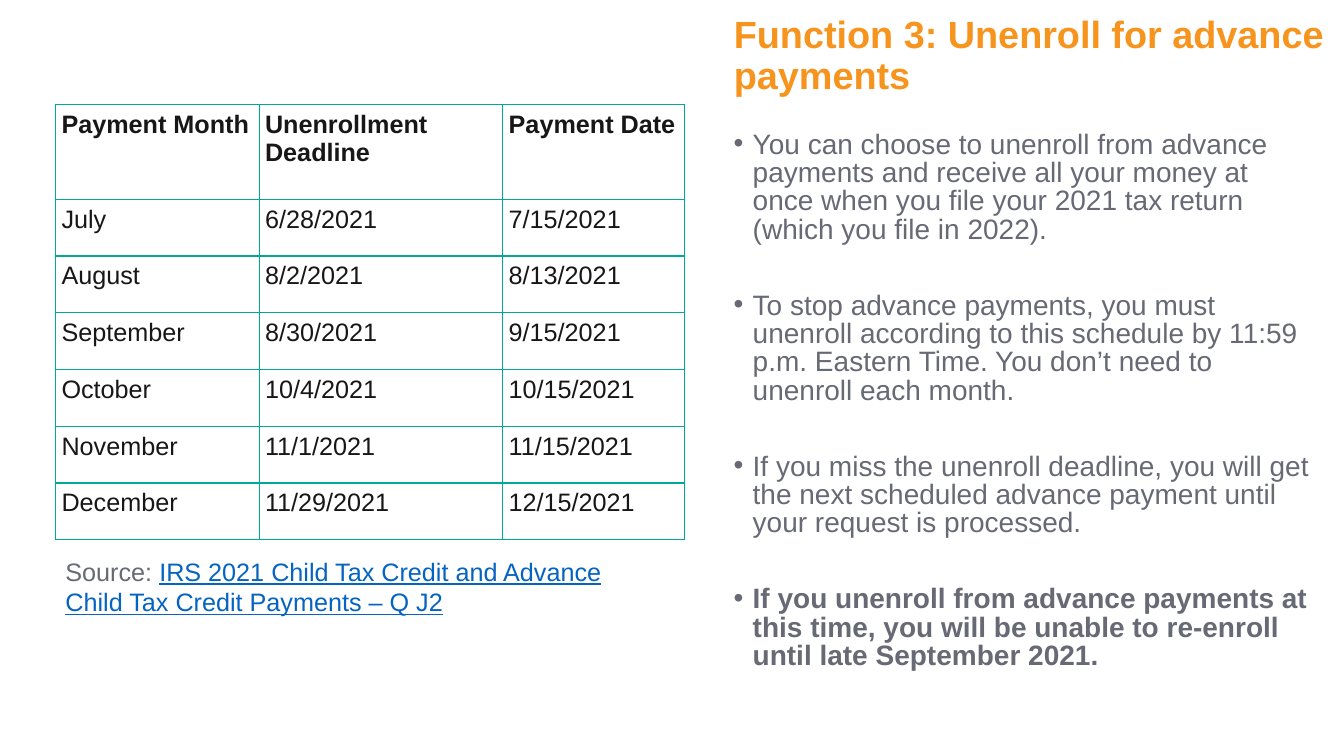
"""Build the slide on unenrolling from advance payments."""
from lxml.etree import SubElement
from pptx import Presentation
from pptx.dml.color import RGBColor
from pptx.enum.text import MSO_ANCHOR, PP_ALIGN
from pptx.oxml.ns import qn
from pptx.util import Cm, Pt

COLORS = {"title": "F7941E", "body": "676974", "cell": "181717",
          "border": "00A998", "link": "0563C1", "paper": "FFFFFF"}


def style(font, size, color, bold=False):
    font.name, font.size, font.bold = "Arial", Pt(size), bold
    font.color.rgb = RGBColor.from_string(COLORS[color])


def add_borders(cell):
    properties = cell._tc.get_or_add_tcPr()
    for position, side in enumerate(("lnL", "lnR", "lnT", "lnB")):
        line = properties.makeelement(qn(f"a:{side}"), {"w": str(Pt(1))})
        fill = SubElement(line, qn("a:solidFill"))
        SubElement(fill, qn("a:srgbClr"), val=COLORS["border"])
        properties.insert(position, line)


deck = Presentation()
deck.slide_width, deck.slide_height = Cm(33.87), Cm(19.05)
page = deck.slides.add_slide(deck.slide_layouts[5])

title = page.shapes.title
title.left, title.top, title.width, title.height = Cm(18.24), Cm(0.28), Cm(15.6), Cm(1.96)
title.text_frame.text = "Function 3: Unenroll for advance payments"
title.text_frame.vertical_anchor = MSO_ANCHOR.TOP
heading = title.text_frame.paragraphs[0]
heading.alignment = PP_ALIGN.LEFT
heading.line_spacing = 0.9
style(heading.font, 27, "title", True)

points = [
    "You can choose to unenroll from advance payments and receive all your money at once "
    "when you file your 2021 tax return (which you file in 2022).",
    "To stop advance payments, you must unenroll according to this schedule by 11:59 p.m. "
    "Eastern Time. You don’t need to unenroll each month.",
    "If you miss the unenroll deadline, you will get the next scheduled advance payment "
    "until your request is processed.",
    "If you unenroll from advance payments at this time, you will be unable to re-enroll "
    "until late September 2021.",
]
body = page.shapes.add_textbox(Cm(18.24), Cm(3.2), Cm(15.16), Cm(13.59)).text_frame
body.word_wrap = True
for number, point in enumerate(points):
    para = body.add_paragraph() if number else body.paragraphs[0]
    para.text = point
    para.line_spacing = 0.84
    para.space_before = Pt(34.3 if number else 0)
    properties = para._p.get_or_add_pPr()
    properties.set("marL", str(Cm(0.48)))
    properties.set("indent", str(Cm(-0.48)))
    SubElement(properties, qn("a:buFont"), typeface="Arial")
    SubElement(properties, qn("a:buChar"), char="•")
    style(para.font, 20, "body", bold=point == points[-1])

schedule = [
    ("Payment Month", "Unenrollment Deadline", "Payment Date"),
    ("July", "6/28/2021", "7/15/2021"),
    ("August", "8/2/2021", "8/13/2021"),
    ("September", "8/30/2021", "9/15/2021"),
    ("October", "10/4/2021", "10/15/2021"),
    ("November", "11/1/2021", "11/15/2021"),
    ("December", "11/29/2021", "12/15/2021"),
]
table = page.shapes.add_table(len(schedule), 3, Cm(1.4), Cm(2.64), Cm(15.86), Cm(10.95)).table
for column, width in zip(table.columns, (5.13, 6.14, 4.59)):
    column.width = Cm(width)
for row_index, entries in enumerate(schedule):
    table.rows[row_index].height = Cm(1.43 if row_index else 2.38)
    for column_index, entry in enumerate(entries):
        cell = table.cell(row_index, column_index)
        cell.text = entry
        cell.margin_left = cell.margin_right = cell.margin_top = cell.margin_bottom = Cm(0.15)
        cell.fill.solid()
        cell.fill.fore_color.rgb = RGBColor.from_string(COLORS["paper"])
        add_borders(cell)
        style(cell.text_frame.paragraphs[0].font, 18, "cell", bold=row_index == 0)

source = page.shapes.add_textbox(Cm(1.4), Cm(13.89), Cm(15.09), Cm(1.8)).text_frame
source.word_wrap = True
citation = source.paragraphs[0]
for words, color in (
    ("Source:\u00a0", "body"),
    ("IRS 2021 Child Tax Credit and Advance Child Tax Credit Payments – Q J2", "link"),
):
    span = citation.add_run()
    span.text = words
    style(span.font, 18, color)
    span.font.underline = color == "link"

deck.save("out.pptx")
